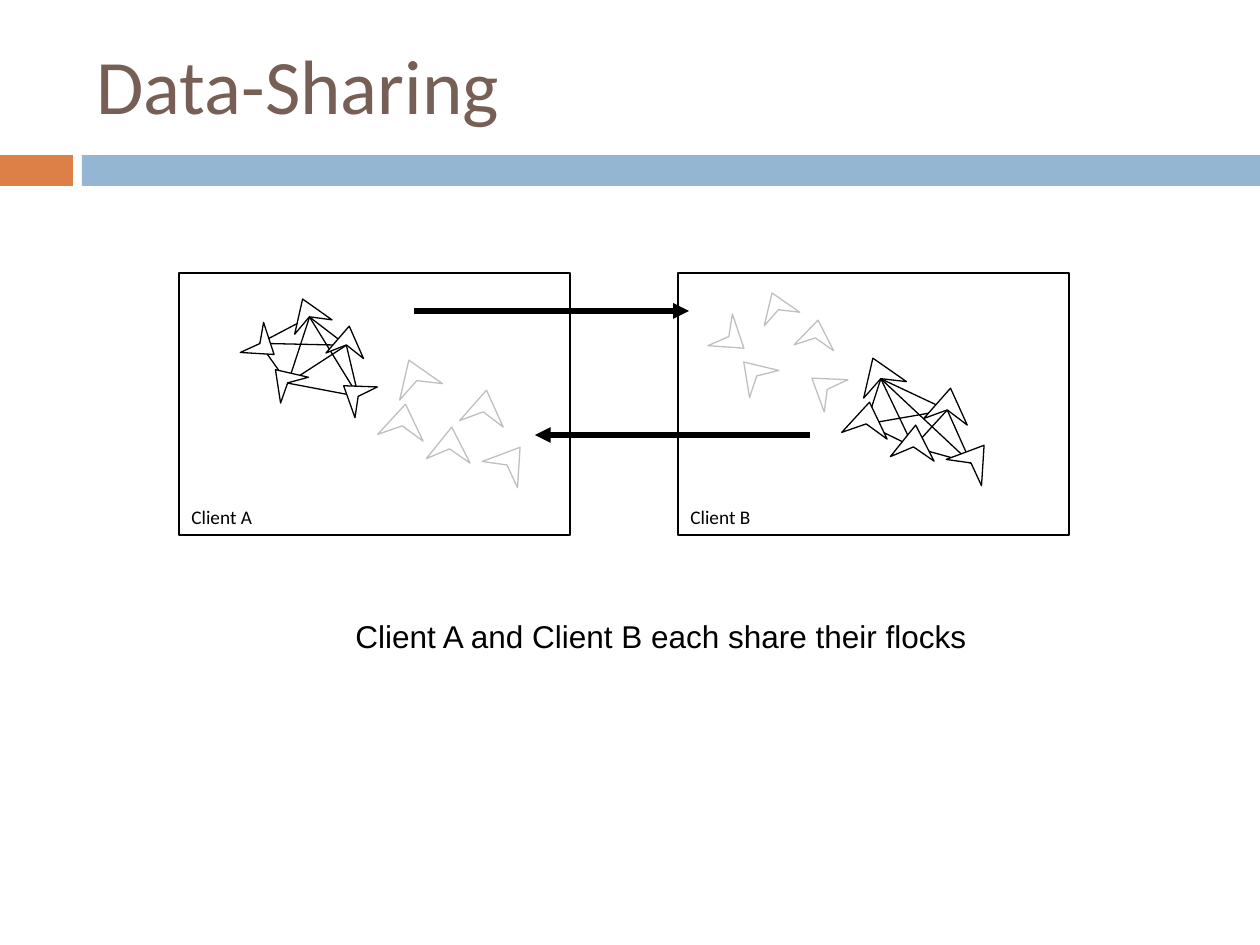
import itertools
import math

import lxml.etree
import pptx
import pptx.dml.color
import pptx.enum.shapes
import pptx.enum.text
import pptx.oxml.ns
import pptx.util

SCALE = 914400 / 126
COLORS = {
    "orange": "DD8047",
    "blue": "94B6D2",
    "brown": "775F55",
    "black": "000000",
    "gray": "BFBFBF",
    "white": "FFFFFF",
}
RGB = {name: pptx.dml.color.RGBColor.from_string(code) for name, code in COLORS.items()}
RECTANGLE = pptx.enum.shapes.MSO_SHAPE.RECTANGLE
STRAIGHT = pptx.enum.shapes.MSO_CONNECTOR.STRAIGHT
ANCHOR = pptx.enum.text.MSO_ANCHOR


def write(shape, text, font="Calibri", size=11, color="black", anchor=ANCHOR.TOP, wrap=True):
    frame = shape.text_frame
    frame.word_wrap = wrap
    frame.vertical_anchor = anchor
    para = frame.paragraphs[0]
    para.alignment = pptx.enum.text.PP_ALIGN.LEFT
    span = para.add_run()
    span.text = text
    span.font.name = font
    span.font.size = pptx.util.Pt(size)
    span.font.color.rgb = RGB[color]


def connect(start, end, width=0.75, arrow=False):
    ends = [round(value * SCALE) for value in (*start, *end)]
    line = page.shapes.add_connector(STRAIGHT, *ends)
    line.line.color.rgb = RGB["black"]
    line.line.width = pptx.util.Pt(width)
    if arrow:
        outline = line.line._get_or_add_ln()
        lxml.etree.SubElement(outline, pptx.oxml.ns.qn("a:tailEnd"), type="triangle")
    lxml.etree.SubElement(line._element.spPr, pptx.oxml.ns.qn("a:effectLst"))


deck = pptx.Presentation()
deck.slide_width = round(1260 * SCALE)
deck.slide_height = round(945 * SCALE)
page = deck.slides.add_slide(deck.slide_layouts[6])

for left, width, color in [(0, 73, "orange"), (82, 1178, "blue")]:
    place = [round(value * SCALE) for value in (left, 155, width, 31)]
    band = page.shapes.add_shape(RECTANGLE, *place)
    band.shadow.inherit = False
    band.fill.solid()
    band.fill.fore_color.rgb = RGB[color]
    band.line.fill.background()

for left, name in [(179, "Client A"), (678, "Client B")]:
    place = [round(value * SCALE) for value in (left, 273, 391, 262)]
    client = page.shapes.add_shape(RECTANGLE, *place)
    client.shadow.inherit = False
    client.fill.solid()
    client.fill.fore_color.rgb = RGB["white"]
    client.line.color.rgb = RGB["black"]
    client.line.width = pptx.util.Pt(0.75)
    write(client, name, anchor=ANCHOR.BOTTOM)

flock_a = [(285, 380, 317.1), (355, 394, 306.2), (308, 313, 339), (347, 341, 8.5), (263, 346, 127.7)]
flock_b = [(914, 442, 5.9), (974, 459, 36.6), (879, 374, 339), (948, 405, 8.5), (867, 419, 8.5)]
shared_a = [(x + 469, y - 7, angle) for x, y, angle in flock_a]
shared_b = [(x - 464, y + 2, angle) for x, y, angle in flock_b]
unlinked = (1, 4)

for flock, width, height, color in [
    (flock_a, 39, 29, "black"),
    (flock_b, 45, 34, "black"),
    (shared_a, 39, 29, "gray"),
    (shared_b, 45, 34, "gray"),
]:
    notch = 0.15 * height
    if color == "black":
        notches = [
            (x - notch * math.sin(math.radians(angle)), y + notch * math.cos(math.radians(angle)))
            for x, y, angle in flock
        ]
        for pair in itertools.combinations(range(len(flock)), 2):
            if pair != unlinked:
                connect(notches[pair[0]], notches[pair[1]])
    for x, y, angle in flock:
        builder = page.shapes.build_freeform(x, y - height / 2, scale=SCALE)
        bottom = y + height / 2
        builder.add_line_segments([(x + width / 2, bottom), (x, y + notch), (x - width / 2, bottom)])
        bird = builder.convert_to_shape()
        bird.rotation = angle
        bird.shadow.inherit = False
        bird.fill.solid()
        bird.fill.fore_color.rgb = RGB["white"]
        bird.line.color.rgb = RGB[color]
        bird.line.width = pptx.util.Pt(0.75)

connect((414, 311), (689, 311), width=3, arrow=True)
connect((810, 435), (535, 435), width=3, arrow=True)

for place, text, style in [
    ((84, 16, 1124, 136), "Data-Sharing", {"size": 44, "color": "brown", "anchor": ANCHOR.MIDDLE}),
    (
        (343, 611, 643, 50),
        "Client A and Client B each share their flocks",
        {"font": "Arial", "size": 18, "wrap": False},
    ),
]:
    box = page.shapes.add_textbox(*[round(value * SCALE) for value in place])
    write(box, text, **style)

deck.save("out.pptx")
